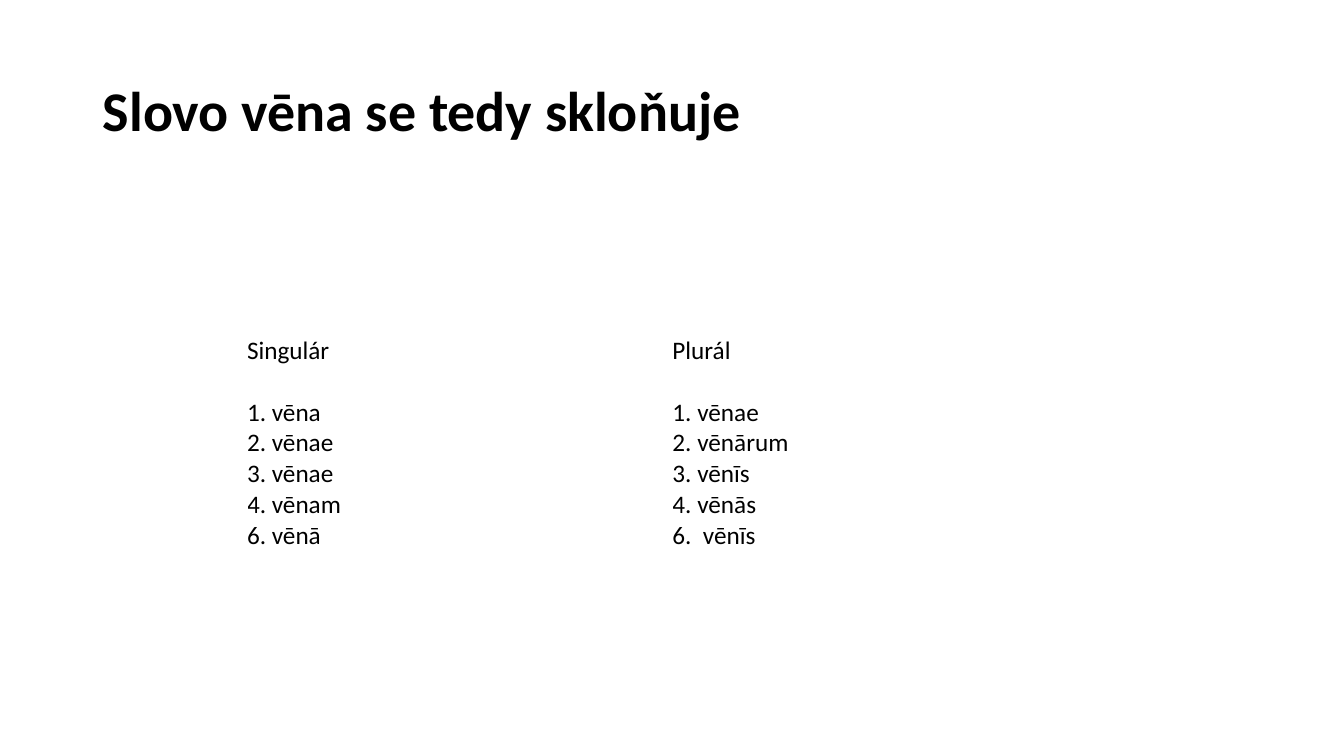
from dataclasses import dataclass

from pptx import Presentation
from pptx.dml.color import RGBColor
from pptx.enum.text import MSO_ANCHOR, PP_ALIGN
from pptx.util import Inches, Pt


@dataclass(frozen=True)
class Theme:
    font: str = "Calibri"
    text: RGBColor = RGBColor(0, 0, 0)
    title_size: int = 40
    body_size: int = 18
    title_spacing: float = 0.9


class Deck:
    def __init__(self, prs, theme):
        self.theme = theme
        self.s = prs.slides.add_slide(prs.slide_layouts[5])

    def add_lines(self, tf, lines, size, bold=False, spacing=1.0):
        fmt = {"name": self.theme.font, "size": Pt(size), "bold": bold}
        for i, line in enumerate(lines):
            p = tf.add_paragraph() if i else tf.paragraphs[0]
            p.alignment = PP_ALIGN.LEFT
            p.line_spacing = spacing
            r = p.add_run()
            r.text = line
            for key, value in fmt.items():
                setattr(r.font, key, value)
            r.font.color.rgb = self.theme.text

    def title(self, text, box):
        sp = self.s.shapes.title
        for key, value in zip(("left", "top", "width", "height"), box):
            setattr(sp, key, Inches(value))
        tf = sp.text_frame
        tf.word_wrap = True
        tf.vertical_anchor = MSO_ANCHOR.MIDDLE
        self.add_lines(tf, [text], self.theme.title_size, True, self.theme.title_spacing)

    def table(self, rows, left, top, col_width, heights):
        cols = len(rows[0])
        frame = self.s.shapes.add_table(
            len(rows), cols, Inches(left), Inches(top),
            Inches(col_width * cols), Inches(sum(heights)))
        tbl = frame.table
        tbl.first_row = tbl.horz_banding = False
        for col in tbl.columns:
            col.width = Inches(col_width)
        for row, height, cells in zip(tbl.rows, heights, rows):
            row.height = Inches(height)
            for cell, lines in zip(row.cells, cells):
                for side in ("left", "top", "right", "bottom"):
                    setattr(cell, f"margin_{side}", 0)
                cell.vertical_anchor = MSO_ANCHOR.TOP
                cell.fill.background()
                self.add_lines(cell.text_frame, lines, self.theme.body_size)


def main():
    prs = Presentation()
    prs.slide_width, prs.slide_height = Inches(13.33), Inches(7.5)
    deck = Deck(prs, Theme())
    deck.title("Slovo vēna se tedy skloňuje", (0.92, 0.4, 11.5, 1.45))
    singular = ["1. vēna", "2. vēnae", "3. vēnae", "4. vēnam", "6. vēnā"]
    plural = ["1. vēnae", "2. vēnārum", "3. vēnīs", "4. vēnās", "6.  vēnīs"]
    rows = [[["Singulár"], ["Plurál"]], [singular, plural]]
    deck.table(rows, 2.45, 3.33, 4.22, (0.61, 1.83))
    prs.save("out.pptx")


if __name__ == "__main__":
    main()
